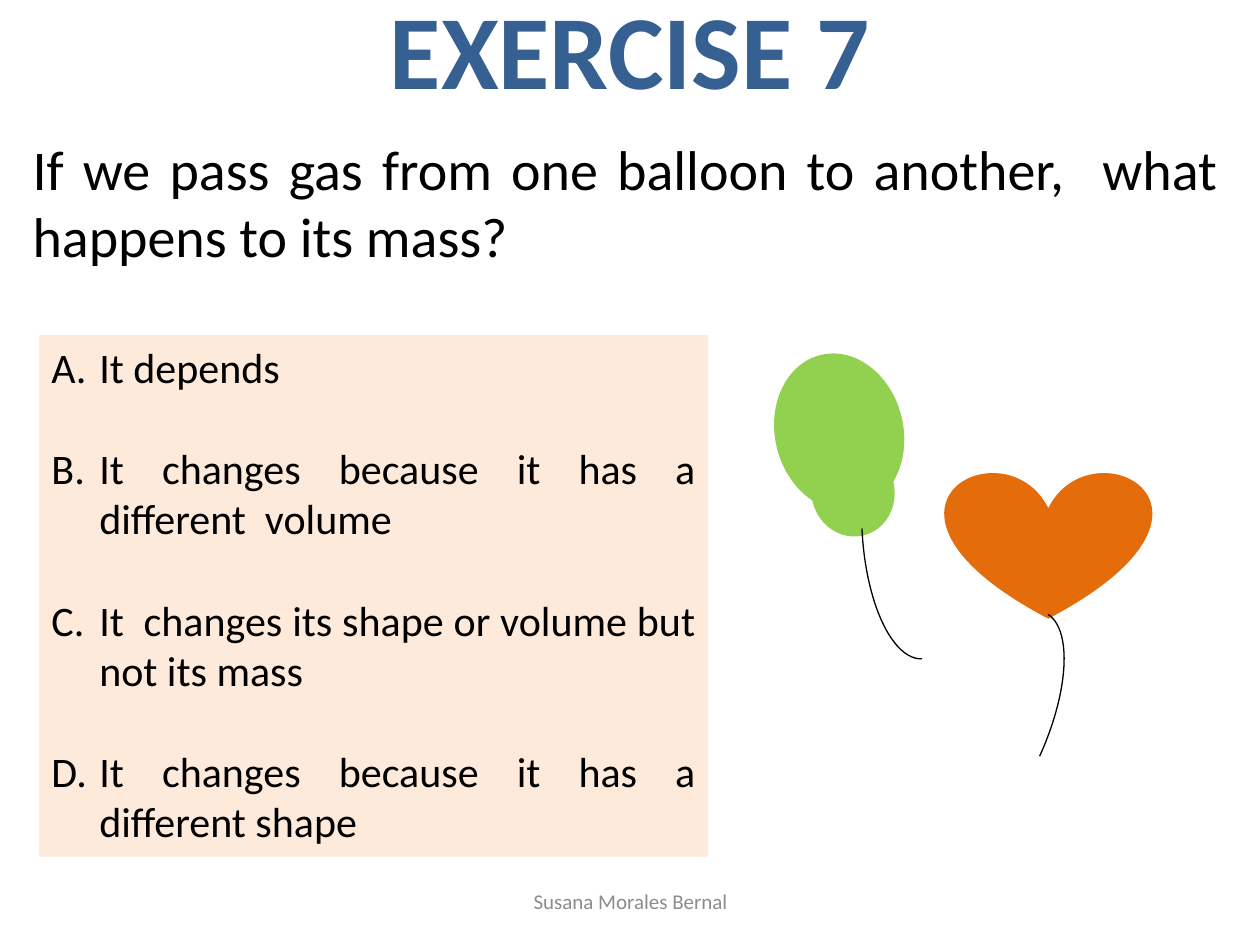
import pptx
import pptx.util
import pptx.dml.color
import pptx.enum.shapes
import pptx.enum.text
import lxml.etree
from pptx.util import Inches

COLORS = {
    "title": "376092",
    "body": "000000",
    "panel": "FDEADA",
    "round_balloon": "92D050",
    "heart_balloon": "E46C0A",
    "string": "000000",
    "footer": "8C8C8C",
}
FONT = "Calibri"
ALIGN = pptx.enum.text.PP_ALIGN
ANCHOR = pptx.enum.text.MSO_ANCHOR
SHAPE = pptx.enum.shapes.MSO_SHAPE
ANSWERS = [
    "It depends",
    "It changes because it has a different  volume",
    "It  changes its shape or volume but not its mass",
    "It changes because it has a different shape",
]


def rgb(name):
    return pptx.dml.color.RGBColor.from_string(COLORS[name])


def write(paragraph, text, *, size, color="body", bold=False, align=ALIGN.JUSTIFY):
    paragraph.alignment = align
    run = paragraph.add_run()
    run.text = text
    run.font.name = FONT
    run.font.size = pptx.util.Pt(size)
    run.font.bold = bold
    run.font.color.rgb = rgb(color)


def add_box(slide, box, anchor=ANCHOR.TOP):
    text_box = slide.shapes.add_textbox(*map(Inches, box))
    text_box.text_frame.word_wrap = True
    text_box.text_frame.vertical_anchor = anchor
    return text_box


def add_line_of_text(slide, box, text, anchor=ANCHOR.TOP, **style):
    frame = add_box(slide, box, anchor).text_frame
    write(frame.paragraphs[0], text, **style)


def number_with_letter(paragraph):
    properties = paragraph._p.get_or_add_pPr()
    indent = Inches(0.38)
    properties.set("marL", str(indent))
    properties.set("indent", str(-indent))
    bullet = lxml.etree.SubElement(properties, pptx.oxml.ns.qn("a:buAutoNum"))
    bullet.set("type", "alphaUcPeriod")


def add_answers(slide, box):
    panel = add_box(slide, box)
    panel.fill.solid()
    panel.fill.fore_color.rgb = rgb("panel")
    frame = panel.text_frame
    for index, answer in enumerate(ANSWERS):
        paragraph = frame.add_paragraph() if index else frame.paragraphs[0]
        if index:
            paragraph.space_before = pptx.util.Pt(29)
        write(paragraph, answer, size=24)
        number_with_letter(paragraph)


def add_part(group, kind, left, top, width, height, rotation=0):
    part = group.shapes.add_shape(kind, *map(Inches, (left, top, width, height)))
    part.rotation = rotation
    part.shadow.inherit = False
    return part


def add_skin(group, kind, color, *box, rotation=0):
    skin = add_part(group, kind, *box, rotation=rotation)
    skin.fill.solid()
    skin.fill.fore_color.rgb = rgb(color)
    skin.line.fill.background()


def add_string(group, left, top, rotation, start=162):
    string = add_part(group, SHAPE.ARC, left, top, 0.86, 2.11, rotation)
    string.adjustments[0] = start
    string.fill.background()
    string.line.color.rgb = rgb("string")
    string.line.width = pptx.util.Pt(0.75)


def add_heart_balloon(slide, left, top):
    balloon = slide.shapes.add_group_shape()
    add_skin(balloon, SHAPE.HEART, "heart_balloon", left, top, 1.64, 1.17)
    add_string(balloon, left - 0.07, top + 1.03, 24.4, start=162.86)


def add_round_balloon(slide, left, top):
    balloon = slide.shapes.add_group_shape()
    tilt = 346.9
    add_skin(balloon, SHAPE.OVAL, "round_balloon", left, top, 1.02, 1.26, rotation=tilt)
    add_skin(balloon, SHAPE.OVAL, "round_balloon", left + 0.29, top + 0.75, 0.66, 0.71, rotation=tilt)
    add_string(balloon, left + 0.69, top + 0.32, 177.4)


def build_exercise(slide):
    add_line_of_text(slide, (0, -0.17, 10, 1.11), "EXERCISE 7",
                     size=60, color="title", bold=True, align=ALIGN.CENTER)
    add_line_of_text(slide, (0.16, 1.02, 9.61, 1.18),
                     "If we pass gas from one balloon to another,  what happens to its mass?",
                     size=32)
    add_answers(slide, (0.31, 2.66, 5.31, 4.14))
    add_heart_balloon(slide, 7.5, 3.74)
    add_round_balloon(slide, 6.15, 2.8)
    add_line_of_text(slide, (3.42, 6.95, 3.17, 0.4), "Susana Morales Bernal",
                     anchor=ANCHOR.MIDDLE, size=12, color="footer", align=ALIGN.CENTER)


def main():
    deck = pptx.Presentation()
    deck.slide_width = Inches(10)
    deck.slide_height = Inches(7.5)
    build_exercise(deck.slides.add_slide(deck.slide_layouts[6]))
    deck.save("out.pptx")


if __name__ == "__main__":
    main()
